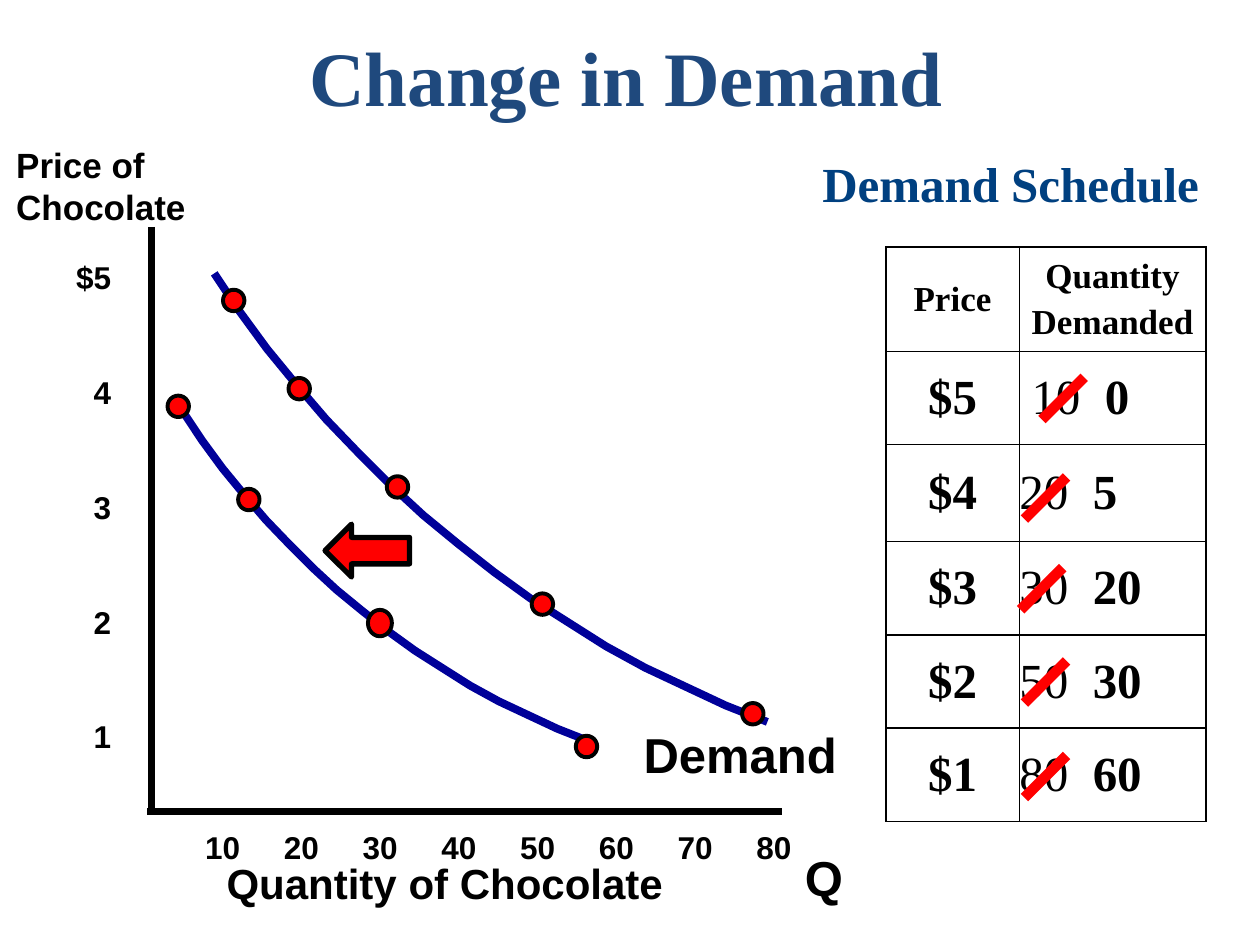
import collections

import lxml.etree
import pptx
import pptx.dml.color
import pptx.enum.shapes
import pptx.enum.text
import pptx.oxml.ns
import pptx.util

COLORS = {"ink": "000000", "title": "1F497D", "heading": "004080",
          "curve": "000099", "accent": "FF0000"}
SANS, SERIF = "Arial", "Times New Roman"
SLIDE_COLUMNS, SLIDE_ROWS = 100, 75
UNIT = pptx.util.Inches(10) // SLIDE_COLUMNS

Box = collections.namedtuple("Box", "left top width height")
ALIGN = pptx.enum.text.PP_ALIGN
ANCHOR = pptx.enum.text.MSO_ANCHOR
SHAPE = pptx.enum.shapes.MSO_SHAPE

CURVE = [(-21.9, -17.8), (-19.9, -14.8), (-17.7, -11.8), (-15.4, -9),
         (-13, -6.2), (-10.5, -3.6), (-7.9, -1), (-5.3, 1.4), (-2.5, 3.7),
         (0.3, 5.9), (3.2, 8), (6.2, 9.9), (9.2, 11.8), (12.3, 13.5),
         (15.5, 15), (18.7, 16.5), (22, 17.8)]
SCHEDULE = [("$5", "10", "0"), ("$4", "20", "5"), ("$3", "30", "20"),
            ("$2", "50", "30"), ("$1", "80", "60")]


def grid(*values):
    return [round(value * UNIT) for value in values]


def inside(box, left, top, width=0, height=0):
    return Box(box.left + left, box.top + top, width, height)


def rgb(name):
    return pptx.dml.color.RGBColor.from_string(COLORS[name])


def format_runs(paragraph, size, face, color="ink", bold=True):
    for run in paragraph.runs:
        run.font.size = pptx.util.Pt(size)
        run.font.name = face
        run.font.bold = bold
        run.font.color.rgb = rgb(color)


def set_line(line, color, width):
    line.color.rgb = rgb(color)
    line.width = pptx.util.Pt(width)


def set_tabs(paragraph, positions):
    tabs = lxml.etree.SubElement(paragraph._p.get_or_add_pPr(),
                                 pptx.oxml.ns.qn("a:tabLst"))
    for position in grid(*positions):
        lxml.etree.SubElement(tabs, pptx.oxml.ns.qn("a:tab"),
                              pos=str(position), algn="l")


def add_text(slide, box, text, size, face=SANS, color="ink",
             align=ALIGN.LEFT, anchor=ANCHOR.TOP, gap=0, tabs=()):
    text_frame = slide.shapes.add_textbox(*grid(*box)).text_frame
    text_frame.word_wrap = True
    text_frame.vertical_anchor = anchor
    text_frame.text = text
    for index, paragraph in enumerate(text_frame.paragraphs):
        paragraph.alignment = align
        if index and gap:
            paragraph.space_before = pptx.util.Pt(gap)
        if tabs:
            set_tabs(paragraph, tabs)
        format_runs(paragraph, size, face, color)


def add_line(slide, start, end, color, width):
    connector = slide.shapes.add_connector(
        pptx.enum.shapes.MSO_CONNECTOR.STRAIGHT,
        *grid(start.left, start.top, end.left, end.top))
    set_line(connector.line, color, width)
    lxml.etree.SubElement(connector._element.spPr,
                          pptx.oxml.ns.qn("a:effectLst"))


def add_marker(slide, kind, box, width):
    shape = slide.shapes.add_shape(kind, *grid(*box))
    shape.shadow.inherit = False
    shape.fill.solid()
    shape.fill.fore_color.rgb = rgb("accent")
    set_line(shape.line, "ink", width)
    return shape


def add_curve(slide, center, scale):
    points = [grid(center.left + x * scale, center.top + y * scale)
              for x, y in CURVE]
    builder = slide.shapes.build_freeform(*points[0])
    builder.add_line_segments(points[1:], close=False)
    curve = builder.convert_to_shape()
    curve.shadow.inherit = False
    curve.fill.background()
    set_line(curve.line, "curve", 4.5)


def add_demand(slide, box, center, scale, dots):
    add_curve(slide, inside(box, *center), scale)
    for x, y, width, height in dots:
        add_marker(slide, SHAPE.OVAL,
                   inside(box, x - width / 2, y - height / 2, width, height),
                   2.25)


def add_title(slide, box):
    title = slide.shapes.title
    title.left, title.top, title.width, title.height = grid(*box)
    text_frame = title.text_frame
    text_frame.text = "Change in Demand"
    text_frame.vertical_anchor = ANCHOR.MIDDLE
    text_frame.paragraphs[0].alignment = ALIGN.CENTER
    format_runs(text_frame.paragraphs[0], 44, SERIF, "title")


def add_graph(slide, box):
    add_line(slide, inside(box, 12, 6), inside(box, 12, 52.7), "ink", 4)
    add_line(slide, inside(box, 11.7, 52.4), inside(box, 62.1, 52.4), "ink", 4)
    add_text(slide, inside(box, 62.9, 54.8, 5, 5.7), "Q", 28)
    add_text(slide, inside(box, 3.8, 8, 6, 40.1), "$5\n4\n3\n2\n1", 18,
             align=ALIGN.RIGHT, gap=44)
    add_text(slide, inside(box, 0.3, -0.1, 25.2, 5.7), "Price of Chocolate",
             20, anchor=ANCHOR.MIDDLE)
    add_text(slide, inside(box, 17, 55.5, 41.8, 5.1), "Quantity of Chocolate",
             24, anchor=ANCHOR.MIDDLE)
    quantities = [str(value) for value in range(10, 90, 10)]
    add_text(slide, inside(box, 15.3, 53.2, 49.5, 4), "\t".join(quantities),
             18, tabs=[6.25 * step for step in range(1, len(quantities))])

    dot = (1.7, 1.7)
    before = [(18.55, 11.85), (23.75, 18.85), (31.55, 26.65), (43.05, 35.95),
              (59.75, 44.65)]
    add_demand(slide, box, (38.9, 27.5), 1, [place + dot for place in before])
    after = [(14.15, 20.25) + dot, (19.75, 27.65) + dot,
             (30.15, 37.45, 1.9, 2.1), (46.55, 47.25) + dot]
    add_demand(slide, box, (30.6, 33.8), 0.73, after)
    add_text(slide, inside(box, 50.1, 45, 19.3, 5.7), "Demand", 28)
    arrow = add_marker(slide, SHAPE.RIGHT_ARROW,
                       inside(box, 25.8, 29.6, 6.7, 4.2), 3)
    arrow.rotation = 180


def set_borders(cell):
    properties = cell._tc.get_or_add_tcPr()
    for index, side in enumerate(("lnL", "lnR", "lnT", "lnB")):
        border = lxml.etree.Element(pptx.oxml.ns.qn("a:" + side), w="12700")
        fill = lxml.etree.SubElement(border, pptx.oxml.ns.qn("a:solidFill"))
        lxml.etree.SubElement(fill, pptx.oxml.ns.qn("a:srgbClr"),
                              val=COLORS["ink"])
        properties.insert(index, border)


def fill_cell(cell, text, size, align=ALIGN.CENTER):
    cell.margin_left = cell.margin_right = 0
    cell.margin_top = cell.margin_bottom = 0
    cell.vertical_anchor = ANCHOR.MIDDLE
    cell.fill.background()
    set_borders(cell)
    cell.text_frame.text = text
    for index, paragraph in enumerate(cell.text_frame.paragraphs):
        paragraph.alignment = align
        if index:
            paragraph.space_before = pptx.util.Pt(4)
        format_runs(paragraph, size, SERIF)


def fill_quantity(cell, old, new):
    fill_cell(cell, old, 28, ALIGN.LEFT)
    paragraph = cell.text_frame.paragraphs[0]
    set_tabs(paragraph, [5.83])
    format_runs(paragraph, 28, SERIF, bold=False)
    paragraph.add_run().text = "\t" + new
    paragraph.runs[1].font.bold = True
    paragraph.runs[1].font.size = pptx.util.Pt(28)
    paragraph.runs[1].font.name = SERIF
    paragraph.runs[1].font.color.rgb = rgb("ink")


def add_schedule(slide, box):
    add_text(slide, inside(box, 0.6, -0.3, 39.2, 10.3), "Demand Schedule", 28,
             SERIF, "heading", ALIGN.CENTER)
    frame = slide.shapes.add_table(
        len(SCHEDULE) + 1, 2, *grid(*inside(box, 10.3, 7.6, 25.4, 45.6)))
    table = frame.table
    table.first_row = table.horz_banding = False
    for column, width in zip(table.columns, grid(10.6, 14.8)):
        column.width = width
    for row, height in zip(table.rows, grid(8.3, 7.4, 7.7, 7.4, 7.4, 7.4)):
        row.height = height
    fill_cell(table.cell(0, 0), "Price", 20)
    fill_cell(table.cell(0, 1), "Quantity\nDemanded", 20)
    for row, (price, old, new) in enumerate(SCHEDULE, 1):
        fill_cell(table.cell(row, 0), price, 28)
        fill_quantity(table.cell(row, 1), old, new)
    table.cell(1, 1).margin_left = grid(0.97)[0]

    strikes = [(22.7, 21.3), (21.3, 29.2), (21, 36.4), (21.3, 43.8),
               (21.3, 51.3)]
    for x, y in strikes:
        add_line(slide, inside(box, x, y), inside(box, x + 3.35, y - 3.35),
                 "accent", 6)


def main():
    presentation = pptx.Presentation()
    presentation.slide_width, presentation.slide_height = grid(
        SLIDE_COLUMNS, SLIDE_ROWS)
    slide = presentation.slides.add_slide(presentation.slide_layouts[5])
    add_title(slide, Box(2.5, 1.3, 94.4, 9.4))
    add_graph(slide, Box(0, 12, 70, 61))
    add_schedule(slide, Box(60, 12, 40, 54))
    presentation.save("out.pptx")


if __name__ == "__main__":
    main()
